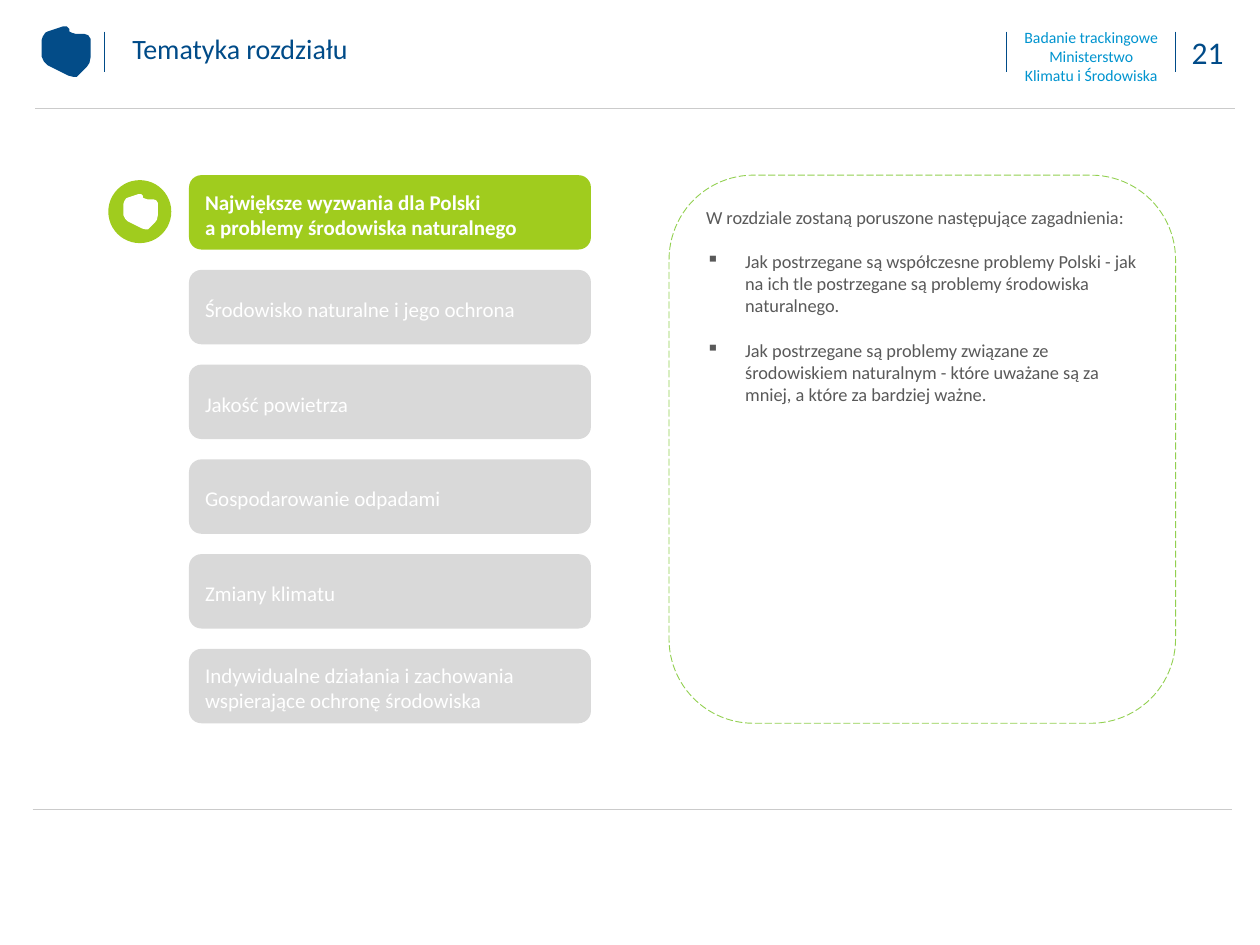
from lxml import etree
from pptx import Presentation, util as u
from pptx.dml.color import RGBColor
from pptx.enum import dml, shapes, text
from pptx.oxml.ns import qn

NAVY, LIME, GREY, WHITE = "004B88", "A0CC1E", "D9D9D9", "FFFFFF"
TOPICS = [
    ["Największe wyzwania dla Polski", "a problemy środowiska naturalnego"],
    ["Środowisko naturalne i jego ochrona"],
    ["Jakość powietrza"],
    ["Gospodarowanie odpadami"],
    ["Zmiany klimatu"],
    ["Indywidualne działania i zachowania wspierające ochronę środowiska"],
]
INTRO = "W rozdziale zostaną poruszone następujące zagadnienia:"
POINTS = [
    "Jak postrzegane są współczesne problemy Polski - jak na ich tle "
    "postrzegane są problemy środowiska naturalnego.",
    "Jak postrzegane są problemy związane ze środowiskiem naturalnym - "
    "które uważane są za mniej, a które za bardziej ważne.",
]
MAP = [
    (39, 24), (38, 29), (36, 32), (30, 38), (28, 40), (25, 40), (21, 39),
    (5, 31), (2, 28), (0, 24), (0, 11), (1, 8), (3, 5), (5, 4), (17, 0),
    (20, 0), (21, 1), (22, 2), (22, 4), (24, 5), (27, 6), (34, 6), (37, 7),
    (39, 10), (39, 11),
]


def color(code):
    """Return the colour for a hex string."""
    return RGBColor.from_string(code)


def paint(shape, fill=None):
    """Give a shape a plain fill or none, without line and shadow."""
    shape.shadow.inherit = False
    shape.line.fill.background()
    if fill:
        shape.fill.solid()
        shape.fill.fore_color.rgb = color(fill)
    else:
        shape.fill.background()
    return shape


def block(slide, kind, box, fill=None):
    """Add a preset shape."""
    return paint(slide.shapes.add_shape(kind, *map(u.Inches, box)), fill)


def label(slide, box):
    """Add an empty text box."""
    return slide.shapes.add_textbox(*map(u.Inches, box))


def bullet(para, char):
    """Give a paragraph a hanging bullet."""
    props = para._p.get_or_add_pPr()
    props.set("marL", str(u.Inches(0.31)))
    props.set("indent", str(-u.Inches(0.31)))
    etree.SubElement(props, qn("a:buChar")).set("char", char)


def write(shape, lines, size=12, ink=WHITE, bold=False, align="LEFT",
          anchor="TOP", left=0.1, top=0.05):
    """Fill a shape with formatted paragraphs."""
    frame = shape.text_frame
    frame.word_wrap = True
    frame.vertical_anchor = getattr(text.MSO_ANCHOR, anchor)
    frame.margin_left, frame.margin_top = u.Inches(left), u.Inches(top)
    frame.text = "\n".join(lines)
    for para in frame.paragraphs:
        para.alignment = getattr(text.PP_ALIGN, align)
        for run in para.runs:
            font = run.font
            font.name, font.size, font.bold = "Calibri", u.Pt(size), bold
            font.color.rgb = color(ink)
    return frame


def rule(slide, start, end, ink):
    """Add a thin straight line."""
    line = slide.shapes.add_connector(
        shapes.MSO_CONNECTOR.STRAIGHT, *map(u.Inches, start + end))
    line.line.color.rgb = color(ink)
    line.line.width = u.Pt(0.25)
    etree.SubElement(line._element.spPr, qn("a:effectLst"))


def country(slide, left, top, scale, fill):
    """Draw the rounded map outline."""
    spots = [(u.Inches(left + x * scale / 100), u.Inches(top + y * scale / 100))
             for x, y in MAP]
    pen = slide.shapes.build_freeform(*spots[0])
    pen.add_line_segments(spots[1:], close=True)
    paint(pen.convert_to_shape(), fill)


def header(slide):
    """Add the title, page number and rules."""
    write(label(slide, (9.25, 0.21, 0.67, 0.4)), ["21"], size=18, ink=NAVY,
          align="CENTER")
    for x in (0.83, 7.99, 9.33):
        rule(slide, (x, 0.25), (x, 0.57), NAVY)
    for x, y in ((0.28, 0.86), (0.26, 6.42)):
        rule(slide, (x, y), (x + 9.52, y), "CBCBCB")
    write(label(slide, (7.94, 0.17, 1.44, 0.56)),
          ["Badanie trackingowe", "Ministerstwo", "Klimatu i Środowiska"],
          size=9, ink="0094CF", align="CENTER")
    write(label(slide, (0.83, 0.2, 7.17, 0.41)), ["Tematyka rozdziału"],
          size=16, ink=NAVY, left=0.22)
    country(slide, 0.33, 0.21, 1, "034C88")


def menu(slide):
    """Add the chapter list with the current one lit."""
    for i, lines in enumerate(TOPICS):
        box = (1.5, 1.39 + i * 0.752, 3.19, 0.59)
        tile = block(slide, shapes.MSO_SHAPE.ROUNDED_RECTANGLE, box,
                     GREY if i else LIME)
        write(tile, lines, bold=i == 0, anchor="MIDDLE", top=0.08)
    block(slide, shapes.MSO_SHAPE.OVAL, (0.86, 1.43, 0.5, 0.5), LIME)
    country(slide, 0.98, 1.54, 0.7, WHITE)


def panel(slide):
    """Add the dashed panel with the chapter's questions."""
    card = block(slide, shapes.MSO_SHAPE.ROUNDED_RECTANGLE,
                 (5.31, 1.39, 4.02, 4.35))
    card.line.color.rgb = color("92D050")
    card.line.width = u.Pt(0.5)
    card.line.dash_style = dml.MSO_LINE.LONG_DASH
    frame = write(card, [INTRO] + POINTS, size=10.5, ink="595959")
    frame.paragraphs[0].alignment = text.PP_ALIGN.JUSTIFY
    for para in frame.paragraphs[1:]:
        para.space_before = u.Pt(12.8)
        bullet(para, "▪")


def main():
    """Build and save the slide."""
    deck = Presentation()
    deck.slide_width, deck.slide_height = u.Inches(10), u.Inches(7.5)
    slide = deck.slides.add_slide(deck.slide_layouts[6])
    header(slide)
    menu(slide)
    panel(slide)
    deck.save("out.pptx")


if __name__ == "__main__":
    main()
